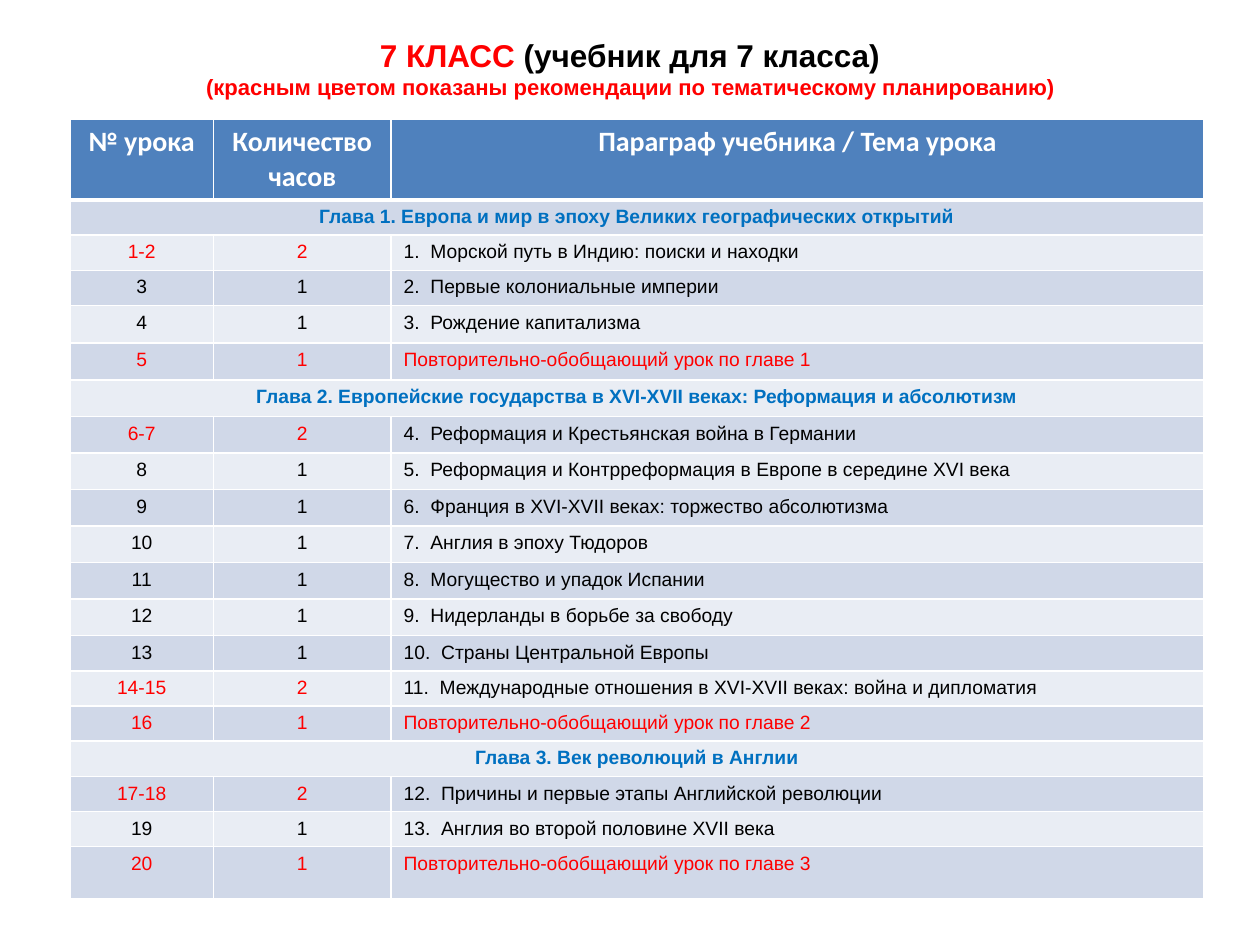
from lxml import etree
from pptx import Presentation
from pptx.dml.color import RGBColor
from pptx.enum import text as t
from pptx.oxml import ns
from pptx.util import Pt

HUES = {"red": "FF0000", "black": "000000", "white": "FFFFFF",
        "blue": "0070C0", "head": "4F81BD", "odd": "D0D8E8", "even": "E9EDF4"}
HEADS = ["№ урока", "Количество часов", "Параграф учебника / Тема урока"]
WIDTHS = [82, 101.5, 464.5]
HEIGHTS = [44.6] + [20.1] * 3 + [21.6] + [20.9] * 8 + [20.1] * 6 + [30]
PLAN = [
    ("Европа и мир в эпоху Великих географических открытий", [
        (2, "Морской путь в Индию: поиски и находки"),
        (1, "Первые колониальные империи"),
        (1, "Рождение капитализма")]),
    ("Европейские государства в XVI-XVII веках: Реформация и абсолютизм", [
        (2, "Реформация и Крестьянская война в Германии"),
        (1, "Реформация и Контрреформация в Европе в середине XVI века"),
        (1, "Франция в XVI-XVII веках: торжество абсолютизма"),
        (1, "Англия в эпоху Тюдоров"),
        (1, "Могущество и упадок Испании"),
        (1, "Нидерланды в борьбе за свободу"),
        (1, "Страны Центральной Европы"),
        (2, "Международные отношения в XVI-XVII веках: война и дипломатия")]),
    ("Век революций в Англии", [
        (2, "Причины и первые этапы Английской революции"),
        (1, "Англия во второй половине XVII века")]),
]


def rgb(hue):
    return RGBColor.from_string(HUES[hue])


def add_run(para, words, hue, **form):
    run = para.add_run()
    run.text = words
    for key, val in form.items():
        setattr(run.font, key, val)
    run.font.color.rgb = rgb(hue)


def add_title(slide):
    title = slide.shapes.title
    place = {"left": 36, "top": 21.6, "width": 648, "height": 34.6}
    for key, val in place.items():
        setattr(title, key, Pt(val))
    frame = title.text_frame
    frame.auto_size = t.MSO_AUTO_SIZE.NONE
    frame.vertical_anchor = t.MSO_ANCHOR.MIDDLE
    para = frame.paragraphs[0]
    para.alignment = t.PP_ALIGN.CENTER
    form = {"name": "Arial", "size": Pt(18), "bold": True}
    add_run(para, "7 КЛАСС ", "red", **form)
    add_run(para, "(учебник для 7 класса)", "black", **form)
    para.add_line_break()
    form["size"] = Pt(12.6)
    add_run(para, "(красным цветом показаны рекомендации по тематическому планированию)",
            "red", **form)


def set_edges(cell, base):
    props = cell._tc.get_or_add_tcPr()
    for side, wide in zip("LRTB", [1, 1, 1, base]):
        line = etree.SubElement(props, ns.qn(f"a:ln{side}"), w=str(Pt(wide)))
        fill = etree.SubElement(line, ns.qn("a:solidFill"))
        etree.SubElement(fill, ns.qn("a:srgbClr"), val=HUES["white"])


def paint(cell, fill, base=1):
    set_edges(cell, base)
    cell.fill.solid()
    cell.fill.fore_color.rgb = rgb(fill)


def write(cell, words, hue, center=True, **form):
    para = cell.text_frame.paragraphs[0]
    para.alignment = t.PP_ALIGN.CENTER if center else t.PP_ALIGN.LEFT
    add_run(para, words, hue, **form)


def list_rows():
    rows, lesson, topic = [], 1, 1
    for num, (name, items) in enumerate(PLAN, 1):
        rows.append([(f"Глава {num}. {name}", "blue")])
        for hours, words in items + [(1, None)]:
            last = lesson + hours - 1
            span = f"{lesson}-{last}" if hours > 1 else str(lesson)
            hue = "red" if hours > 1 or words is None else "black"
            if words is None:
                theme = (f"Повторительно-обобщающий урок по главе {num}", "red")
            else:
                theme = (f"{topic}.  {words}", "black")
                topic += 1
            rows.append([(span, hue), (str(hours), hue), theme])
            lesson = last + 1
    return rows


def add_plan(slide):
    rows = list_rows()
    grid = slide.shapes.add_table(len(rows) + 1, len(WIDTHS), Pt(40), Pt(67.9),
                                  Pt(sum(WIDTHS)), Pt(sum(HEIGHTS))).table
    for col, wide in zip(grid.columns, WIDTHS):
        col.width = Pt(wide)
    for row, high in zip(grid.rows, HEIGHTS):
        row.height = Pt(high)
    for col, words in enumerate(HEADS):
        cell = grid.cell(0, col)
        paint(cell, "head", 3)
        write(cell, words, "white", name="Calibri", size=Pt(16), bold=True)
    for row, items in enumerate(rows, 1):
        for col in range(len(WIDTHS)):
            paint(grid.cell(row, col), "odd" if row % 2 else "even")
        whole = len(items) == 1
        if whole:
            grid.cell(row, 0).merge(grid.cell(row, len(WIDTHS) - 1))
        for col, (words, hue) in enumerate(items):
            write(grid.cell(row, col), words, hue, col < 2,
                  name="Arial", size=Pt(11), bold=whole)


def main():
    deck = Presentation()
    deck.slide_width, deck.slide_height = Pt(720), Pt(540)
    slide = deck.slides.add_slide(deck.slide_layouts[5])
    add_title(slide)
    add_plan(slide)
    deck.save("out.pptx")


if __name__ == "__main__":
    main()
